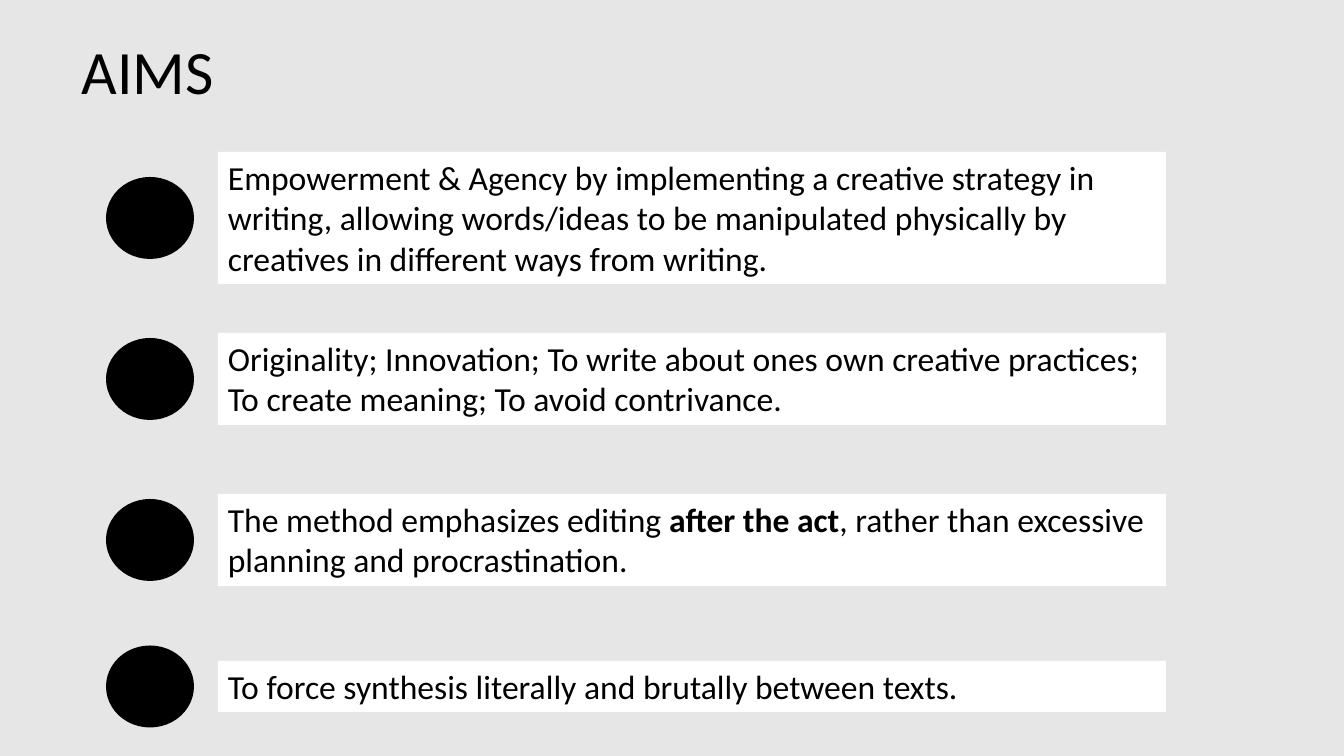
from pptx import Presentation
from pptx.dml.color import RGBColor
from pptx.enum.shapes import MSO_SHAPE
from pptx.enum.text import MSO_ANCHOR, PP_ALIGN
from pptx.util import Emu, Pt


def px(count):
    return Emu(round(count * 914400 / 100.8))


def color(code):
    return RGBColor.from_string(code)


deck = Presentation()
deck.slide_width, deck.slide_height = px(1344), px(756)
page = deck.slides.add_slide(deck.slide_layouts[6])
page.background.fill.solid()
page.background.fill.fore_color.rgb = color("E7E6E6")

# Each aim: top and height of its box, then (text, bold) spans
aims = [
    (152, 132, [("Empowerment & Agency by implementing a creative strategy in writing, "
                 "allowing words/ideas to be manipulated physically by creatives "
                 "in different ways from writing.", False)]),
    (333, 92, [("Originality; Innovation; To write about ones own creative practices; "
                "To create meaning; To avoid contrivance.", False)]),
    (494, 92, [("The method emphasizes editing ", False),
               ("after the act", True),
               (", rather than excessive planning and procrastination.", False)]),
    (661, 51, [("To force synthesis literally and brutally between texts.", False)]),
]
DOT_WIDTH, DOT_HEIGHT = 88, 82

# Title
title = page.shapes.add_textbox(px(72), px(28), px(200), px(85))
title.text_frame.word_wrap = True
span = title.text_frame.paragraphs[0].add_run()
span.text = "AIMS"
span.font.name = "Calibri"
span.font.size = Pt(44)
span.font.color.rgb = color("000000")

# Aims: a dot centred beside each white box
for top, height, spans in aims:
    dot_top = top + (height - DOT_HEIGHT) / 2
    dot = page.shapes.add_shape(MSO_SHAPE.OVAL, px(106), px(dot_top),
                                px(DOT_WIDTH), px(DOT_HEIGHT))
    box = page.shapes.add_shape(MSO_SHAPE.RECTANGLE, px(218), px(top), px(948), px(height))
    for shape, fill in ((dot, "000000"), (box, "FFFFFF")):
        shape.shadow.inherit = False
        shape.fill.solid()
        shape.fill.fore_color.rgb = color(fill)
        shape.line.fill.background()

    box.text_frame.word_wrap = True
    box.text_frame.vertical_anchor = MSO_ANCHOR.TOP
    para = box.text_frame.paragraphs[0]
    para.alignment = PP_ALIGN.LEFT
    for text, bold in spans:
        span = para.add_run()
        span.text = text
        span.font.name = "Calibri"
        span.font.size = Pt(24)
        span.font.bold = bold
        span.font.color.rgb = color("000000")

deck.save("out.pptx")
